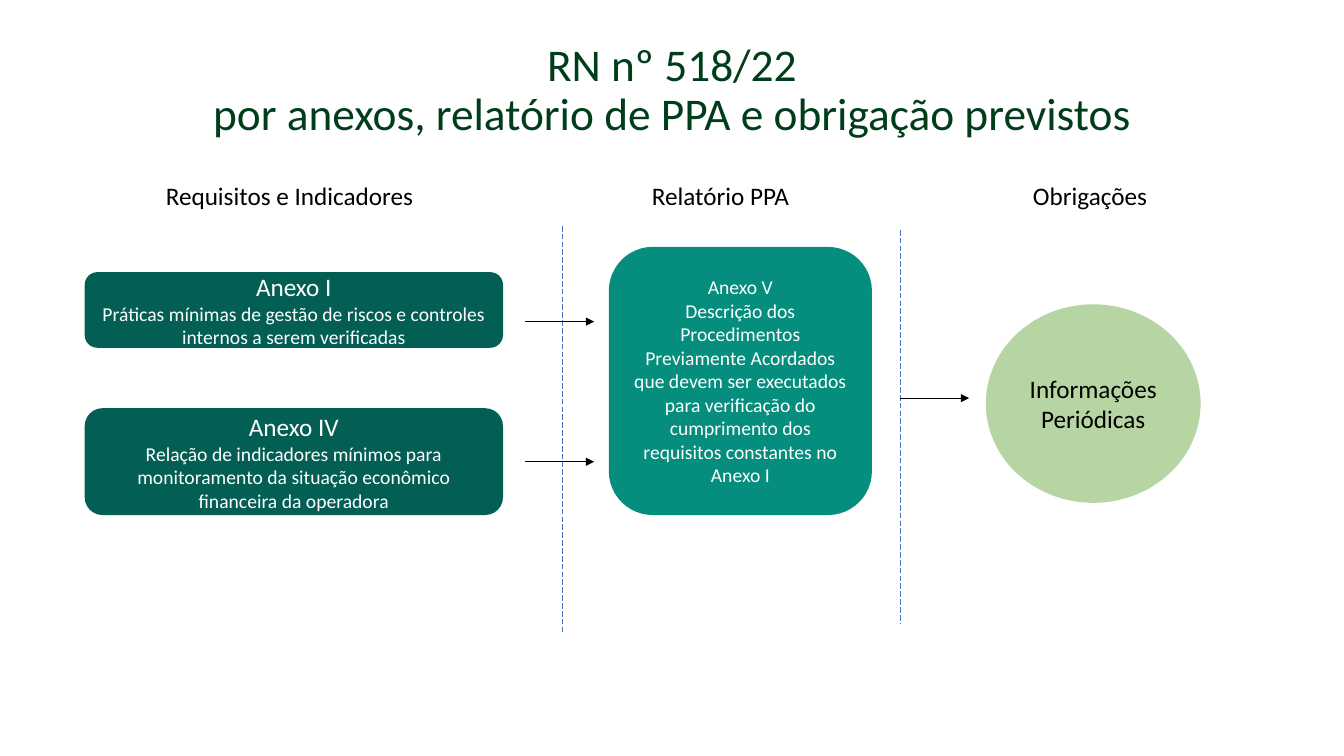
from lxml import etree
from pptx import Presentation
from pptx.dml.color import RGBColor
from pptx.enum.dml import MSO_LINE
from pptx.enum.shapes import MSO_CONNECTOR, MSO_SHAPE
from pptx.enum.text import MSO_ANCHOR, PP_ALIGN
from pptx.oxml.ns import qn
from pptx.util import Pt

ROUNDED = MSO_SHAPE.ROUNDED_RECTANGLE
OVAL = MSO_SHAPE.OVAL
STRAIGHT = MSO_CONNECTOR.STRAIGHT
LONG_DASH = MSO_LINE.LONG_DASH
CENTER = PP_ALIGN.CENTER
TOP, MIDDLE, BOTTOM = MSO_ANCHOR.TOP, MSO_ANCHOR.MIDDLE, MSO_ANCHOR.BOTTOM

BLACK = RGBColor(0x00, 0x00, 0x00)
WHITE = RGBColor(0xFF, 0xFF, 0xFF)
TITLE_GREEN = RGBColor(0x00, 0x3E, 0x1B)
DARK_GREEN = RGBColor(0x03, 0x5E, 0x53)
TEAL = RGBColor(0x05, 0x8D, 0x7D)
LIGHT_GREEN = RGBColor(0x70, 0xAD, 0x47)
BLUE = RGBColor(0x44, 0x72, 0xC4)


class SlideBuilder:
    font = "Calibri"
    line_width = 0.5

    def __init__(self, s):
        self.s = s

    def set_text(self, sp, lines, color, anchor, spacing=1.0):
        """Fill a shape with centred paragraphs given as (text, size)."""
        tf = sp.text_frame
        tf.word_wrap = True
        tf.vertical_anchor = anchor
        tf.text = "\n".join(text for text, size in lines)
        for p, (text, size) in zip(tf.paragraphs, lines):
            p.alignment = CENTER
            p.line_spacing = spacing
            for r in p.runs:
                r.font.name = self.font
                r.font.size = Pt(size)
                r.font.color.rgb = color

    def text(self, x, y, w, h, text, size, color, anchor=TOP, spacing=1.0):
        sp = self.s.shapes.add_textbox(Pt(x), Pt(y), Pt(w), Pt(h))
        self.set_text(sp, [(text, size)], color, anchor, spacing)

    def shape(self, kind, x, y, w, h, fill, lines, color=WHITE, alpha=None):
        sp = self.s.shapes.add_shape(kind, Pt(x), Pt(y), Pt(w), Pt(h))
        sp.shadow.inherit = False
        sp.fill.solid()
        sp.fill.fore_color.rgb = fill
        sp.line.fill.background()
        if alpha is not None:
            clr = sp._element.spPr.find(qn("a:solidFill")).find(qn("a:srgbClr"))
            etree.SubElement(clr, qn("a:alpha"), val=str(alpha * 1000))
        self.set_text(sp, lines, color, MIDDLE)

    def line(self, x1, y1, x2, y2, color):
        c = self.s.shapes.add_connector(STRAIGHT, Pt(x1), Pt(y1), Pt(x2), Pt(y2))
        c.line.color.rgb = color
        c.line.width = Pt(self.line_width)
        etree.SubElement(c._element.spPr, qn("a:effectLst"))
        return c

    def divider(self, x, y1, y2):
        self.line(x, y1, x, y2, BLUE).line.dash_style = LONG_DASH

    def arrow(self, x, y, length=49.3):
        c = self.line(x, y, x + length, y, BLACK)
        ln = c._element.spPr.find(qn("a:ln"))
        etree.SubElement(ln, qn("a:tailEnd"), type="triangle")


def main():
    prs = Presentation()
    prs.slide_width, prs.slide_height = Pt(960), Pt(540)
    b = SlideBuilder(prs.slides.add_slide(prs.slide_layouts[6]))

    # Title
    b.text(0, 33.8, 960, 69.8,
           "RN nº 518/22\vpor anexos, relatório de PPA e obrigação previstos",
           32.4, TITLE_GREEN, BOTTOM, 0.9)

    # Column headings, given by their centres
    heading_width = 220
    for center, heading in ((206.8, "Requisitos e Indicadores"),
                            (514.6, "Relatório PPA"),
                            (778.6, "Obrigações")):
        b.text(center - heading_width / 2, 125.4, heading_width, 29,
               heading, 18, BLACK)

    # Column dividers
    b.divider(401.8, 161.3, 452.2)
    b.divider(643, 164.2, 445)

    # Requirements and indicators
    for y, h, name, detail in (
            (194.4, 54, "Anexo I",
             "Práticas mínimas de gestão de riscos e controles internos "
             "a serem verificadas"),
            (291.6, 76.3, "Anexo IV",
             "Relação de indicadores mínimos para monitoramento da situação "
             "econômico financeira da operadora")):
        b.shape(ROUNDED, 60.5, y, 298.8, h, DARK_GREEN,
                [(name, 18), (detail, 14)])

    # Report
    b.shape(ROUNDED, 434.9, 176.4, 187.9, 191.5, TEAL, [
        ("Anexo V", 14),
        ("Descrição dos Procedimentos Previamente Acordados que devem ser "
         "executados para verificação do cumprimento dos requisitos "
         "constantes no Anexo I", 14)])

    # Obligations
    b.shape(OVAL, 704.2, 217.4, 153.4, 141.8, LIGHT_GREEN,
            [("Informações Periódicas", 18)], BLACK, alpha=50)

    # Arrows between columns
    for x, y in ((375.1, 229.7), (375.1, 329.8), (643, 284.4)):
        b.arrow(x, y)

    prs.save("out.pptx")


if __name__ == "__main__":
    main()
